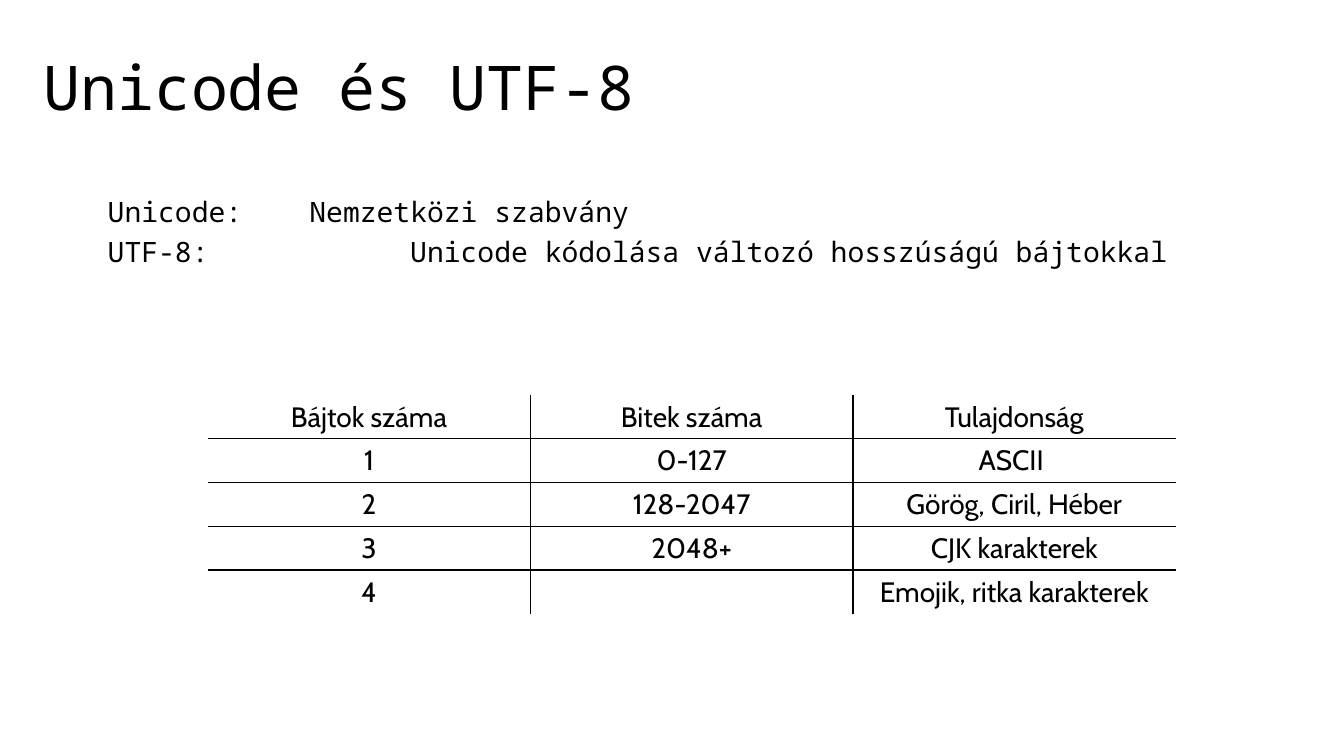
from dataclasses import dataclass

import lxml.etree
import pptx
import pptx.dml.color
import pptx.enum.text
import pptx.oxml.ns
import pptx.util

PX = 9144
NO_GRID_STYLE = "{2D5ABB26-0587-4C30-8999-92F81FD0307C}"


@dataclass(frozen=True)
class Theme:
    ink: str = "000000"
    paper: str = "FFFFFF"
    mono: str = "Noto Sans Mono"
    sans: str = "Cabin"
    title_size: int = 44
    text_size: int = 20
    rule_width: int = 1


@dataclass(frozen=True)
class TextBlock:
    left: int
    top: int
    width: int
    height: int
    lines: tuple[str, ...]
    size: int
    anchor: pptx.enum.text.MSO_ANCHOR
    space_before: int = 0
    tab_stops: tuple[int, ...] = ()


THEME = Theme()

TEXT_BLOCKS = (
    TextBlock(33, 17, 1150, 145, ("Unicode és UTF-8",),
              THEME.title_size, pptx.enum.text.MSO_ANCHOR.MIDDLE),
    TextBlock(97, 192, 1219, 85,
              ("Unicode: \tNemzetközi szabvány",
               "UTF-8:\t\tUnicode kódolása változó hosszúságú bájtokkal"),
              THEME.text_size, pptx.enum.text.MSO_ANCHOR.TOP, 7, (200, 300)),
)

TABLE_LEFT, TABLE_TOP = 206, 392
COL_WIDTH, ROW_HEIGHT = 320, 43
ENCODING_ROWS = (
    ("Bájtok száma", "Bitek száma", "Tulajdonság"),
    ("1", "0-127", "ASCII "),
    ("2", "128-2047", "Görög, Ciril, Héber"),
    ("3", "2048+", "CJK karakterek"),
    ("4", "", "Emojik, ritka karakterek"),
)


def px(length: int) -> pptx.util.Emu:
    return pptx.util.Emu(length * PX)


def rgb(color: str) -> pptx.dml.color.RGBColor:
    return pptx.dml.color.RGBColor.from_string(color)


def add_element(parent, tag: str, **attrs: str):
    el = lxml.etree.SubElement(parent, pptx.oxml.ns.qn(tag))
    for name, value in attrs.items():
        el.set(name, value)
    return el


def style_font(font, name: str, size: int) -> None:
    font.name = name
    font.size = pptx.util.Pt(size)
    font.bold = False
    font.color.rgb = rgb(THEME.ink)


def add_text(slide, block: TextBlock) -> None:
    sp = slide.shapes.add_textbox(
        px(block.left), px(block.top), px(block.width), px(block.height))
    tf = sp.text_frame
    tf.word_wrap = True
    tf.vertical_anchor = block.anchor
    tf.text = "\n".join(block.lines)
    for p in tf.paragraphs:
        p.line_spacing = 0.9
        p.space_before = pptx.util.Pt(block.space_before)
        if block.tab_stops:
            tabs = add_element(p._p.get_or_add_pPr(), "a:tabLst")
            for stop in block.tab_stops:
                add_element(tabs, "a:tab", pos=str(px(stop)), algn="l")
        for r in p.runs:
            style_font(r.font, THEME.mono, block.size)


def add_border(cell, side: str) -> None:
    width = str(pptx.util.Pt(THEME.rule_width))
    ln = add_element(cell._tc.get_or_add_tcPr(), f"a:ln{side}", w=width)
    fill = add_element(ln, "a:solidFill")
    add_element(fill, "a:srgbClr", val=THEME.ink)


def add_encoding_table(slide) -> None:
    n_rows, n_cols = len(ENCODING_ROWS), len(ENCODING_ROWS[0])
    frame = slide.shapes.add_table(
        n_rows, n_cols, px(TABLE_LEFT), px(TABLE_TOP),
        px(n_cols * COL_WIDTH), px(n_rows * ROW_HEIGHT))
    table = frame.table
    table.first_row = table.horz_banding = False
    table._tbl.tblPr.find(pptx.oxml.ns.qn("a:tableStyleId")).text = NO_GRID_STYLE
    for i, row in enumerate(ENCODING_ROWS):
        for j, text in enumerate(row):
            cell = table.cell(i, j)
            inner = {"L": j > 0, "R": j < n_cols - 1,
                     "T": i > 0, "B": i < n_rows - 1}
            for side, shown in inner.items():
                if shown:
                    add_border(cell, side)
            cell.fill.solid()
            cell.fill.fore_color.rgb = rgb(THEME.paper)
            p = cell.text_frame.paragraphs[0]
            p.text = text
            p.alignment = pptx.enum.text.PP_ALIGN.CENTER
            style_font(p.font, THEME.sans, THEME.text_size)
            for r in p.runs:
                style_font(r.font, THEME.sans, THEME.text_size)


def main() -> None:
    prs = pptx.Presentation()
    prs.slide_width, prs.slide_height = px(1333), px(750)
    s = prs.slides.add_slide(prs.slide_layouts[6])
    s.background.fill.solid()
    s.background.fill.fore_color.rgb = rgb(THEME.paper)
    for block in TEXT_BLOCKS:
        add_text(s, block)
    add_encoding_table(s)
    prs.save("out.pptx")


if __name__ == "__main__":
    main()
